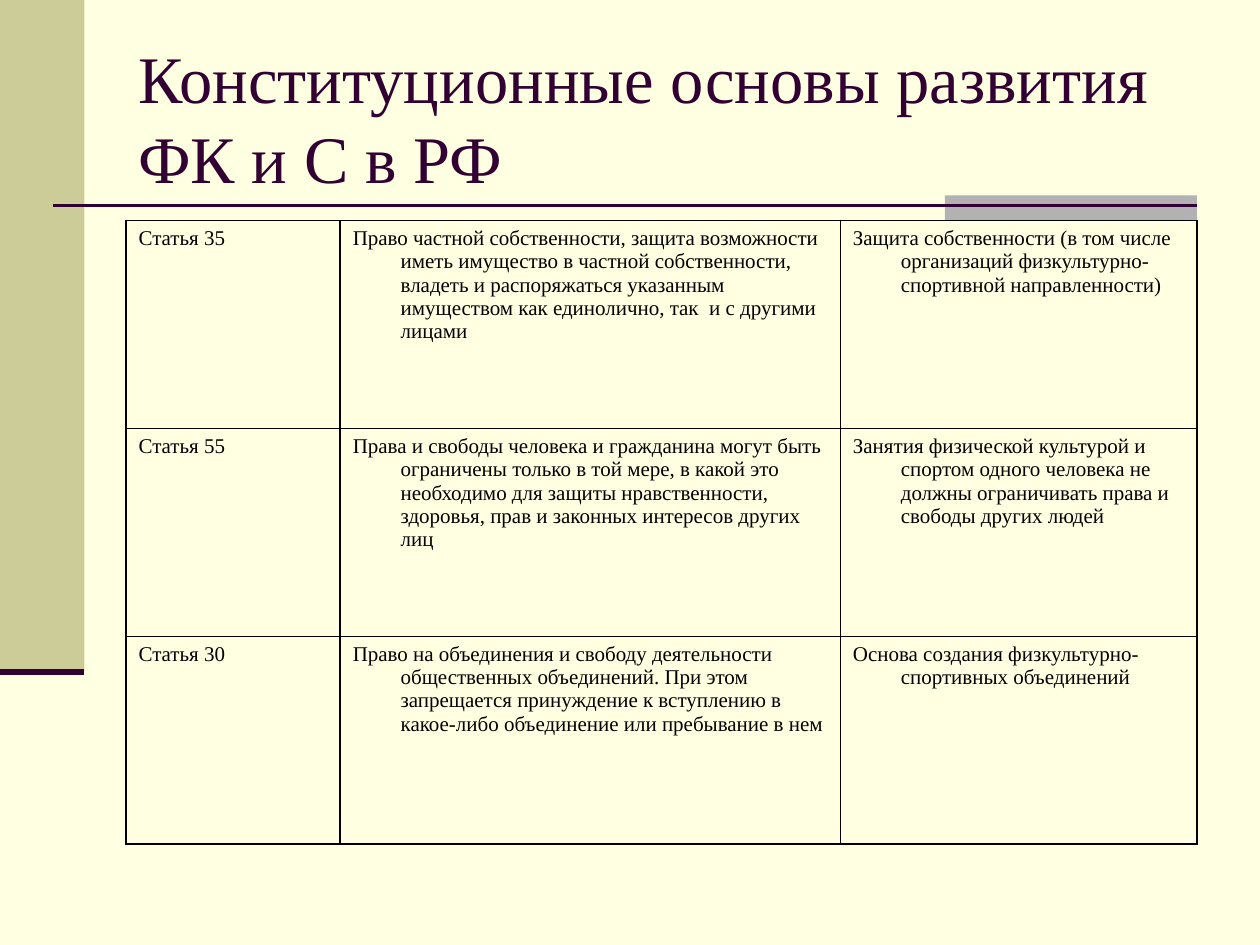
"""Build the slide on the constitutional foundations of physical culture and sport."""
from lxml.etree import SubElement
from pptx import Presentation
from pptx.dml.color import RGBColor
from pptx.enum.shapes import MSO_CONNECTOR as Connector, MSO_SHAPE as Shape
from pptx.enum.text import MSO_ANCHOR as Anchor
from pptx.oxml import parse_xml
from pptx.oxml.ns import nsdecls, qn
from pptx.util import Inches, Pt

TITLE = "Конституционные основы развития ФК и С в РФ"
ARTICLES = [
    ("Статья 35",
     "Право частной собственности, защита возможности иметь имущество в частной "
     "собственности, владеть и распоряжаться указанным имуществом как единолично, "
     "так  и с другими лицами",
     "Защита собственности (в том числе организаций физкультурно-спортивной "
     "направленности)"),
    ("Статья 55",
     "Права и свободы человека и гражданина могут быть ограничены только в той мере, "
     "в какой это необходимо для защиты нравственности, здоровья, прав и законных "
     "интересов других лиц",
     "Занятия физической культурой и спортом одного человека не должны ограничивать "
     "права и свободы других людей"),
    ("Статья 30",
     "Право на объединения и свободу деятельности общественных объединений. При этом "
     "запрещается принуждение к вступлению в какое-либо объединение или пребывание в нем",
     "Основа создания физкультурно-спортивных объединений"),
]
WIDTH, HEIGHT = 10, 7.5
LEFT, CONTENT_WIDTH = 1, 8.5
RIGHT = LEFT + CONTENT_WIDTH
TABLE_TOP, ROW_HEIGHT = 1.75, 1.65
COLUMN_WIDTHS = [1.7, 3.97, 2.83]
BAND_WIDTH, BAND_HEIGHT = 0.67, 5.33
INDENT = 0.38
FONT = "Times New Roman"
PLUM, BLACK = "330033", "000000"
BLOCKS = [((0, 0, BAND_WIDTH, BAND_HEIGHT), "CCCC99"),
          ((RIGHT - 2, TABLE_TOP - 0.2, 2, 0.2), "B2B2B2")]
RULES = [((0.42, 1.63, RIGHT, 1.63), 1.5),
         ((0, BAND_HEIGHT, BAND_WIDTH, BAND_HEIGHT), 3.5)]


def color(code):
    """Turn a hex string into a colour."""
    return RGBColor.from_string(code)


def inches(values):
    """Convert a sequence of numbers to lengths."""
    return [Inches(value) for value in values]


def write(frame, text, size, code):
    """Put one formatted paragraph in a text frame and return it."""
    para = frame.paragraphs[0]
    span = para.add_run()
    span.text = text
    for name, value in {"name": FONT, "size": Pt(size)}.items():
        setattr(span.font, name, value)
    span.font.color.rgb = color(code)
    return para


def add_block(page, place, code):
    """Add a plain filled rectangle."""
    block = page.shapes.add_shape(Shape.RECTANGLE, *inches(place))
    block.shadow.inherit = False
    block.fill.solid()
    block.fill.fore_color.rgb = color(code)
    block.line.fill.background()


def add_rule(page, ends, width):
    """Add a straight plum line."""
    rule = page.shapes.add_connector(Connector.STRAIGHT, *inches(ends))
    rule.line.color.rgb = color(PLUM)
    rule.line.width = Pt(width)
    SubElement(rule._element.spPr, qn("a:effectLst"))


def add_title(page):
    """Add the title text box."""
    box = page.shapes.add_textbox(*inches((LEFT, 0.3, CONTENT_WIDTH, 1.25)))
    box.text_frame.word_wrap = True
    box.text_frame.vertical_anchor = Anchor.MIDDLE
    write(box.text_frame, TITLE, 38, PLUM)


def fill_cell(cell, text):
    """Write a cell with a hanging indent and thin black borders."""
    para = write(cell.text_frame, text, 12, BLACK)
    for name, value in {"marL": INDENT, "indent": -INDENT}.items():
        para._p.get_or_add_pPr().set(name, str(Inches(value)))
    cell.fill.background()
    for index, side in enumerate("LRTB"):
        border = parse_xml(
            f'<a:ln{side} {nsdecls("a")} w="{Pt(1)}"><a:solidFill>'
            f'<a:srgbClr val="{BLACK}"/></a:solidFill></a:ln{side}>')
        cell._tc.get_or_add_tcPr().insert(index, border)


def add_articles(page):
    """Add the table of articles."""
    place = LEFT, TABLE_TOP, CONTENT_WIDTH, ROW_HEIGHT * len(ARTICLES)
    table = page.shapes.add_table(
        len(ARTICLES), len(COLUMN_WIDTHS), *inches(place)).table
    table.first_row = table.horz_banding = False
    for column, width in zip(table.columns, COLUMN_WIDTHS):
        column.width = Inches(width)
    for row, texts in zip(table.rows, ARTICLES):
        row.height = Inches(ROW_HEIGHT)
        for cell, text in zip(row.cells, texts):
            fill_cell(cell, text)


def main():
    """Assemble and save the deck."""
    deck = Presentation()
    deck.slide_width, deck.slide_height = inches((WIDTH, HEIGHT))
    page = deck.slides.add_slide(deck.slide_layouts[6])
    page.background.fill.solid()
    page.background.fill.fore_color.rgb = color("FFFFE1")
    for place, code in BLOCKS:
        add_block(page, place, code)
    for ends, width in RULES:
        add_rule(page, ends, width)
    add_title(page)
    add_articles(page)
    deck.save("out.pptx")


if __name__ == "__main__":
    main()
